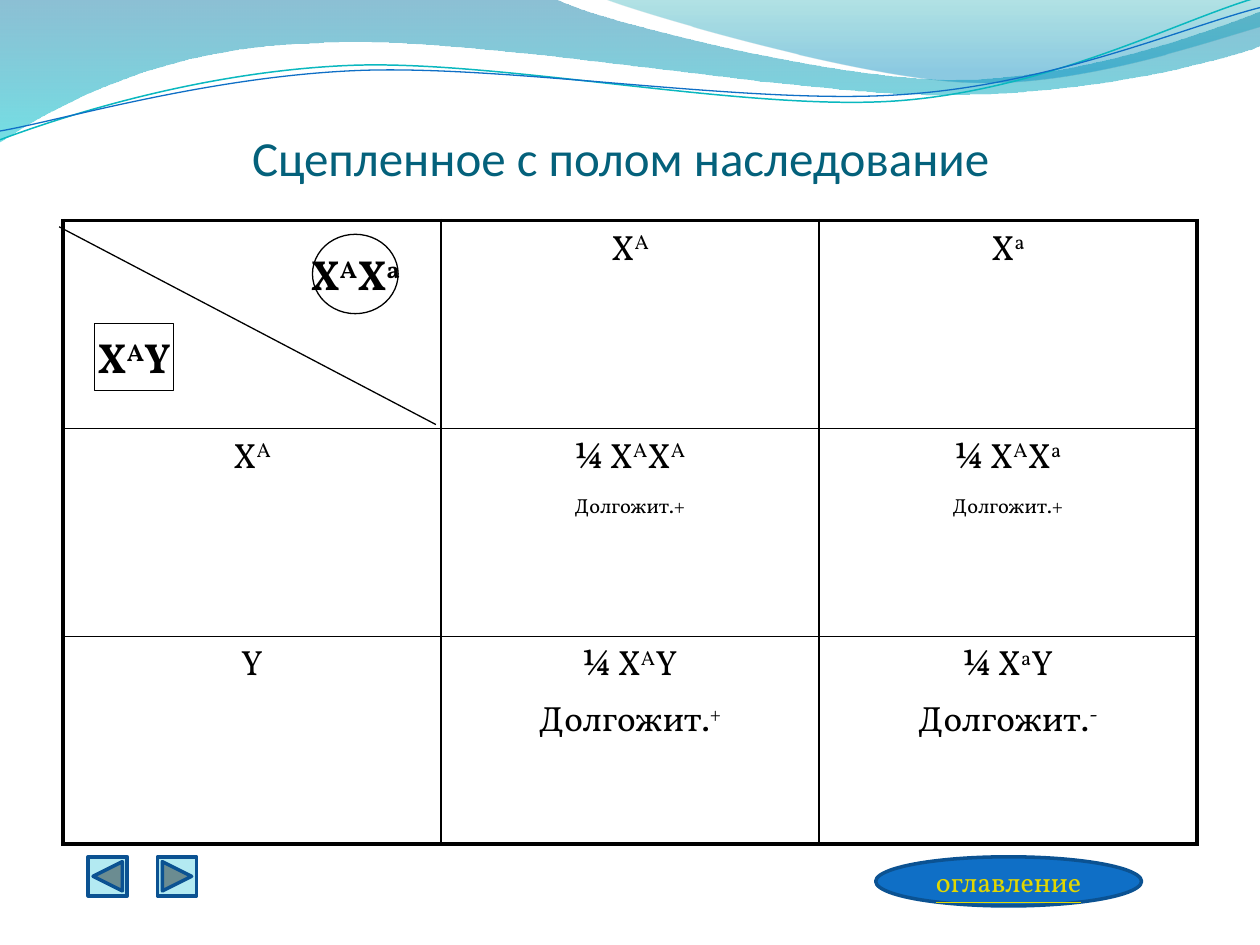
from math import cos, radians, sin

from lxml import etree
from pptx import Presentation
from pptx.dml.color import RGBColor
from pptx.enum.shapes import MSO_CONNECTOR, MSO_SHAPE
from pptx.enum.text import MSO_ANCHOR, PP_ALIGN
from pptx.oxml.ns import qn
from pptx.util import Inches, Pt

CENTER = PP_ALIGN.CENTER
OVAL, RECT = MSO_SHAPE.OVAL, MSO_SHAPE.RECTANGLE
BACK, NEXT = MSO_SHAPE.ACTION_BUTTON_BACK_OR_PREVIOUS, MSO_SHAPE.ACTION_BUTTON_FORWARD_OR_NEXT

THEME = dict(
    head="Calibri", body="Vollkorn",
    title="04617B", ink="000000", blue="0F6FC6", edge="0B5292", pale="B3EAF2",
    link="E2D700", teal="0AB8BF",
    title_pt=28, cell_pt=20, parent_pt=24, link_pt=16,
    outer=2.25, inner=1, thin=0.75, button=2,
)

# Content: text after every odd ^ is superscript
TITLE = "Сцепленное с полом наследование "
GRID = [
    [[], ["X^А"], ["X^а"]],
    [["X^А"], ["¼ X^А^X^А", "^Долгожит.+"], ["¼ X^А^X^а", "^Долгожит.+"]],
    [["Y"], ["¼ X^А^Y", "Долгожит.^+"], ["¼ X^а^Y", "Долгожит.^-"]],
]
PARENTS = [(OVAL, "X^А^X^а", (2.48, 1.86, 0.68, 0.63)),
           (RECT, "X^А^Y", (0.75, 2.57, 0.63, 0.53))]
CONTENTS = "оглавление"

# Header waves: two-number nodes are corners, six-number nodes are Bezier curves
BANDS = [
    ((-0.01, -0.01, 10.02, 1.14),
     [(0, 0), (4.4, -0.01), (4.76, 0.17, 6.64, 0.63, 7.58, 0.63),
      (8.53, 0.63, 9.58, 0.26, 10, 0.09), (10.01, 0.36),
      (9.83, 0.44, 8.7, 0.76, 7.46, 0.75), (6.22, 0.75, 3.82, 0.28, 2.57, 0.34),
      (1.29, 0.36, 0.46, 0.83, -0.01, 1.13), (0, 0)],
     [(0, "0074A1", 45), (1, "00C6CF", 55)]),
    ((4.79, -0.01, 5.21, 0.7),
     [(4.79, -0.01), (5.09, 0.11, 6.82, 0.62, 7.69, 0.65),
      (8.56, 0.69, 9.61, 0.32, 10, 0.21), (10, 0), (4.79, -0.01)],
     [(0, "00A1A9", 30), (0.8, "008BBF", 45)]),
]
TILT = -2.7
STRANDS = [
    ((-0.02, 0.22, 10.02, 0.71),
     [(0, 1.11), (0.48, 0.93, 1.58, 0.57, 2.77, 0.52), (3.95, 0.47, 5.93, 0.89, 7.13, 0.8),
      (8.33, 0.71, 9.38, 0.15, 9.98, -0.02)], "teal", 0.85),
    ((-0.02, 0.3, 10.03, 0.58),
     [(0, 1.04), (0.47, 0.96, 1.64, 0.61, 2.83, 0.56), (4.03, 0.51, 5.97, 0.84, 7.17, 0.75),
      (8.36, 0.67, 9.41, 0.21, 10, 0.06)], "blue", 0.75),
]


def rgb(name):
    return RGBColor.from_string(THEME.get(name, name))


def inches(box):
    return [Inches(v) for v in box]


def add_wave(s, box, nodes, closed, tilt=0):
    """Freeform with true curves; a tilted one is drawn level, then rotated."""
    left, top, width, height = box
    c, n = cos(radians(-tilt)), sin(radians(-tilt))

    def local(x, y):
        dx, dy = x - left - width / 2, y - top - height / 2
        return dx * c - dy * n + width / 2, dx * n + dy * c + height / 2

    builder = s.shapes.build_freeform(0, 0, scale=Inches(1))
    builder.add_line_segments([(1, 1)], close=False)
    sp = builder.convert_to_shape()
    sp.left, sp.top, sp.width, sp.height = inches(box)
    sp.rotation = tilt
    sp.shadow.inherit = False
    outline = next(sp._element.spPr.iter(qn("a:path")))
    for child in list(outline):
        outline.remove(child)
    outline.set("w", str(Inches(width)))
    outline.set("h", str(Inches(height)))
    for i, node in enumerate(nodes):
        tag = "a:moveTo" if i == 0 else "a:lnTo" if len(node) == 2 else "a:cubicBezTo"
        step = etree.SubElement(outline, qn(tag))
        for point in zip(node[::2], node[1::2]):
            x, y = inches(local(*point))
            etree.SubElement(step, qn("a:pt"), x=str(x), y=str(y))
    if closed:
        etree.SubElement(outline, qn("a:close"))
    return sp


def style(sp, fill, line, width):
    sp.shadow.inherit = False
    if fill:
        sp.fill.solid()
        sp.fill.fore_color.rgb = rgb(fill)
    else:
        sp.fill.background()
    sp.line.color.rgb = rgb(line)
    sp.line.width = Pt(width)


def write(tf, lines, size, color="ink", font="body", bold=False, before=0):
    for i, line in enumerate(lines):
        p = tf.add_paragraph() if i else tf.paragraphs[0]
        p.alignment = CENTER
        p.space_before = Pt(before)
        p.font.name, p.font.size, p.font.bold = THEME[font], Pt(THEME[size]), bold
        p.font.color.rgb = rgb(color)
        for n, part in enumerate(line.split("^")):
            if part:
                r = p.add_run()
                r.text = part
                if n % 2:
                    r.font._element.set("baseline", "30000")


def border(cell, widths):
    tcPr = cell._tc.get_or_add_tcPr()
    for i, (side, width) in enumerate(zip("LRTB", widths)):
        ln = etree.Element(qn("a:ln" + side), w=str(Pt(width)))
        fill = etree.SubElement(ln, qn("a:solidFill"))
        etree.SubElement(fill, qn("a:srgbClr"), val=THEME["ink"])
        tcPr.insert(i, ln)


prs = Presentation()
prs.slide_width, prs.slide_height = Inches(10), Inches(7.5)
s = prs.slides.add_slide(prs.slide_layouts[6])

# Header waves
for box, nodes, stops in BANDS:
    sp = add_wave(s, box, nodes, True)
    sp.line.fill.background()
    sp.fill.gradient()
    sp.fill.gradient_angle = 270
    for stop, (pos, color, _) in zip(sp.fill.gradient_stops, stops):
        stop.position = pos
        stop.color.rgb = rgb(color)
    for clr, (_, _, alpha) in zip(sp._element.spPr.iter(qn("a:srgbClr")), stops):
        etree.SubElement(clr, qn("a:alpha"), val=str(alpha * 1000))
for box, nodes, color, width in STRANDS:
    style(add_wave(s, box, nodes, False, TILT), None, color, width)

# Title
tf = s.shapes.add_textbox(*inches((0.47, 0.23, 9, 1.25))).text_frame
tf.word_wrap = True
tf.vertical_anchor = MSO_ANCHOR.BOTTOM
tf.margin_left = tf.margin_right = tf.margin_bottom = 0
write(tf, [TITLE], "title_pt", "title", "head")

# Punnett square: heavy frame, thin inner rules
last = len(GRID) - 1
table = s.shapes.add_table(last + 1, last + 1, *inches((0.5, 1.75, 9, 4.95))).table
table.first_row = table.horz_banding = False
for y, row in enumerate(GRID):
    for x, lines in enumerate(row):
        cell = table.cell(y, x)
        cell.fill.background()
        write(cell.text_frame, lines, "cell_pt", before=4)
        border(cell, [THEME["outer" if edge else "inner"]
                      for edge in (x == 0, x == last, y == 0, y == last)])

# Parents, split by a diagonal
line = s.shapes.add_connector(MSO_CONNECTOR.STRAIGHT, *inches((0.47, 1.8, 3.46, 3.37)))
line.line.color.rgb = rgb("ink")
line.line.width = Pt(THEME["thin"])
etree.SubElement(line._element.spPr, qn("a:effectLst"))
for kind, genotype, box in PARENTS:
    sp = s.shapes.add_shape(kind, *inches(box))
    style(sp, None, "ink", THEME["thin"])
    sp.text_frame.word_wrap = False
    sp.text_frame.vertical_anchor = MSO_ANCHOR.MIDDLE
    write(sp.text_frame, [genotype], "parent_pt", bold=True)

# Navigation
for i, kind in enumerate((NEXT, BACK)):
    sp = s.shapes.add_shape(kind, *inches((1.25 - 0.55 * i, 6.8, 0.31, 0.31)))
    style(sp, "pale", "edge", THEME["button"])
sp = s.shapes.add_shape(OVAL, *inches((6.95, 6.8, 2.11, 0.39)))
style(sp, "blue", "edge", THEME["button"])
sp.text_frame.vertical_anchor = MSO_ANCHOR.MIDDLE
write(sp.text_frame, [CONTENTS], "link_pt", "link")
sp.text_frame.paragraphs[0].font.underline = True

prs.save("out.pptx")
